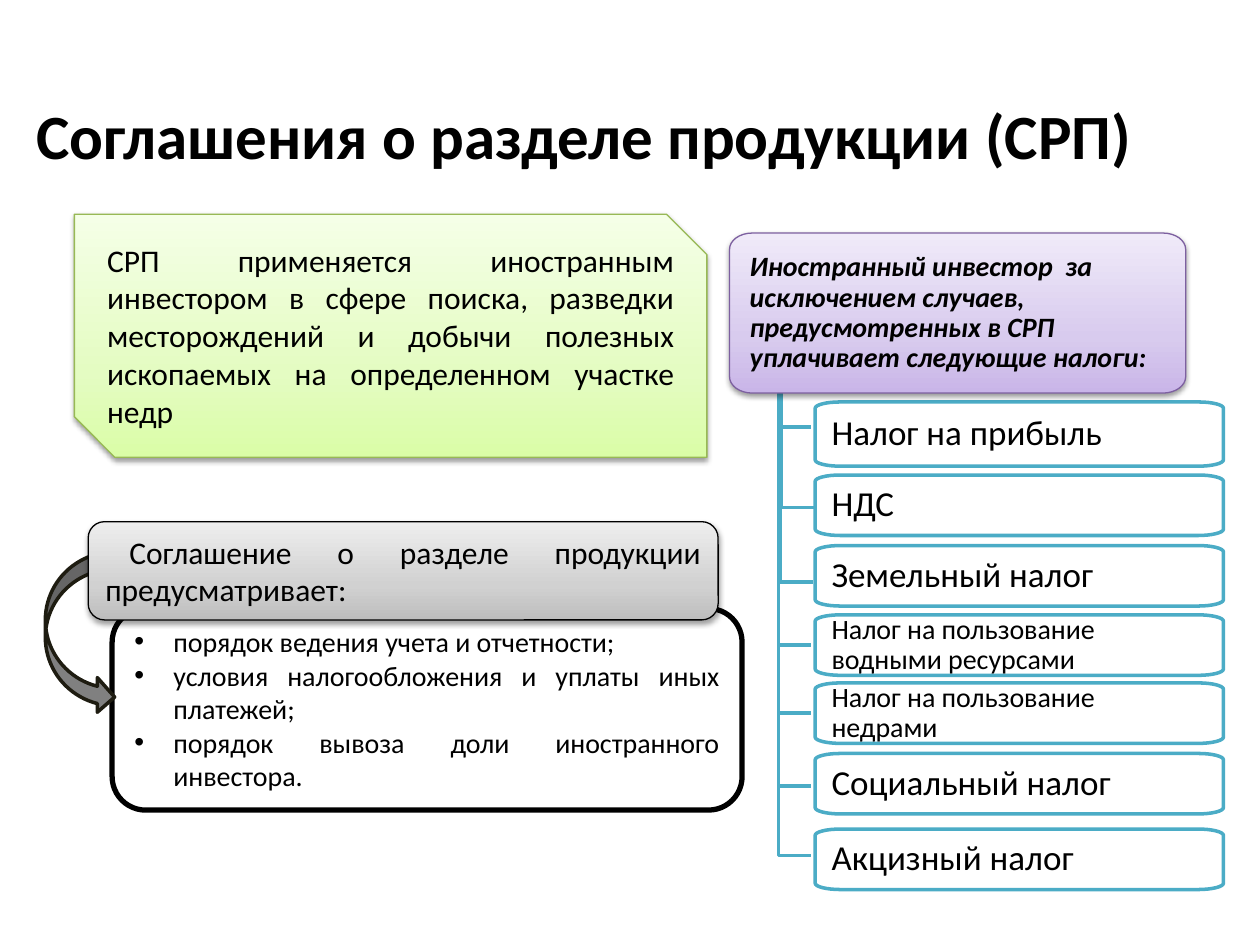
import math
from copy import deepcopy

from pptx import Presentation
from pptx.dml.color import RGBColor
from pptx.enum import shapes, text
from pptx.oxml import parse_xml
from pptx.oxml.ns import nsdecls, qn
from pptx.util import Emu, Inches, Pt

COLUMNS, ROWS = 100, 75
BLACK, WHITE, TEAL = "000000", "FFFFFF", "4BACC6"


def color(value):
    return RGBColor.from_string(value)


class Board:
    font = "Calibri"

    def __init__(self, deck):
        self.slide = deck.slides.add_slide(deck.slide_layouts[6])
        self.column = deck.slide_width / COLUMNS
        self.row = deck.slide_height / ROWS

    def frame(self, left, top, width, height):
        return (Emu(round(left * self.column)), Emu(round(top * self.row)),
                Emu(round(width * self.column)), Emu(round(height * self.row)))

    def paint(self, shape, fill, line, weight):
        shape.shadow.inherit = False
        if fill is None:
            shape.fill.background()
        elif isinstance(fill, str):
            shape.fill.solid()
            shape.fill.fore_color.rgb = color(fill)
        else:
            self.gradient(shape, fill)
            self.shadow(shape)
        shape.line.color.rgb = color(line)
        shape.line.width = Pt(weight)
        return shape

    def gradient(self, shape, tones):
        shape.fill.gradient()
        shape.fill.gradient_angle = 90
        stops = shape._element.spPr.find(".//" + qn("a:gsLst"))
        stops.append(deepcopy(stops[0]))
        for stop, tone, position in zip(shape.fill.gradient_stops, tones, (0, 0.35, 1)):
            stop.color.rgb = color(tone)
            stop.position = position

    def shadow(self, shape):
        shape._element.spPr.find(qn("a:effectLst")).append(parse_xml(
            f'<a:outerShdw {nsdecls("a")} blurRad="{Pt(3.1)}" dist="{Pt(1.6)}" '
            'dir="5400000" rotWithShape="0"><a:srgbClr val="000000">'
            '<a:alpha val="38000"/></a:srgbClr></a:outerShdw>'))

    def preset(self, kind, place, fill, line, weight=0.75, rotation=0):
        shape = self.slide.shapes.add_shape(kind, *self.frame(*place))
        shape.rotation = rotation
        return self.paint(shape, fill, line, weight)

    def outline(self, points, close, fill, line, weight):
        spots = [(x * self.column, y * self.row) for x, y in points]
        builder = self.slide.shapes.build_freeform(*spots[0])
        builder.add_line_segments(spots[1:], close=close)
        return self.paint(builder.convert_to_shape(), fill, line, weight)

    def rounded(self, place, corner, fill, line, weight, steps=8):
        left, top, width, height = place
        rx, ry = corner
        right, bottom = left + width - rx, top + height - ry
        centers = ((right, bottom), (left + rx, bottom), (left + rx, top + ry), (right, top + ry))
        points = []
        for quarter, (x, y) in enumerate(centers):
            for step in range(steps + 1):
                angle = (quarter + step / steps) * math.pi / 2
                points.append((x + rx * math.cos(angle), y + ry * math.sin(angle)))
        return self.outline(points, True, fill, line, weight)

    def branch(self, left, top, bottom, reach=2.6):
        points = ((left, top), (left, bottom), (left + reach, bottom))
        return self.outline(points, False, None, TEAL, 2)

    def label(self, place):
        return self.slide.shapes.add_textbox(*self.frame(*place))

    def letter(self, shape, lines, size, align="LEFT", anchor="TOP", insets=(0.1, 0.05),
               spacing=1, bold=False, italic=False, margin=0, indent=0, bullet=None):
        body = shape.text_frame
        body.word_wrap = True
        body.vertical_anchor = text.MSO_ANCHOR[anchor]
        body.margin_left = body.margin_right = Inches(insets[0])
        body.margin_top = body.margin_bottom = Inches(insets[1])
        for number, line in enumerate(lines):
            paragraph = body.add_paragraph() if number else body.paragraphs[0]
            paragraph.alignment = text.PP_ALIGN[align]
            paragraph.line_spacing = spacing
            properties = paragraph._p.get_or_add_pPr()
            properties.set("marL", str(Inches(margin)))
            properties.set("indent", str(Inches(indent)))
            if bullet:
                properties.append(parse_xml(f'<a:buFont {nsdecls("a")} typeface="Arial"/>'))
                properties.append(parse_xml(f'<a:buChar {nsdecls("a")} char="{bullet}"/>'))
            run = paragraph.add_run()
            run.text = line
            run.font.name = self.font
            run.font.size = Pt(size)
            run.font.bold, run.font.italic = bold, italic
            run.font.color.rgb = color(BLACK)


def main():
    deck = Presentation()
    deck.slide_width, deck.slide_height = Inches(10), Inches(7.5)
    board = Board(deck)
    preset = shapes.MSO_SHAPE

    provisions = board.preset(preset.ROUNDED_RECTANGLE, (8.9, 48.3, 50, 16), WHITE, BLACK, 3)
    board.letter(provisions, ["порядок ведения учета и отчетности;",
                              "условия налогообложения и уплаты иных платежей;",
                              "порядок вывоза доли иностранного инвестора."],
                 16, "JUSTIFY", margin=0.31, indent=-0.31, bullet="•")
    board.preset(preset.CURVED_UP_ARROW, (-0.1, 47.5, 12.9, 5.5), "808080", "1E1C11", 2, 90)

    title = board.label((1.9, 7.6, 98, 6.1))
    board.letter(title, ["Соглашения о разделе продукции (СРП)"], 36, anchor="MIDDLE", bold=True)

    scope = board.preset(preset.SNIP_2_DIAG_RECTANGLE, (5.9, 17, 50.2, 19.3),
                         ("DAFDA7", "E4FCC2", "F5FFE7"), "98B955")
    board.letter(scope, ["СРП применяется иностранным инвестором в сфере поиска, разведки "
                         "месторождений и добычи полезных ископаемых на определенном участке недр"],
                 18, "JUSTIFY")

    agreement = board.preset(preset.ROUNDED_RECTANGLE, (7, 41.4, 50, 7.8),
                             ("BDBDBD", "D1D1D1", "EEEEEE"), BLACK)
    board.letter(agreement, ["Соглашение о разделе продукции предусматривает:"],
                 18, "JUSTIFY", indent=0.19)

    taxes = (
        ("Налог на прибыль", 20, 31.9, 5.1, (61.8, 24.4, 33.9)),
        ("НДС", 20, 37.7, 4.8, (62, 30.7, 40.3)),
        ("Земельный налог", 20, 43.3, 4.8, (61.9, 36.6, 46.2)),
        ("Налог на пользование водными ресурсами", 16, 48.8, 4.8, (61.8, 41.7, 51.2)),
        ("Налог на пользование недрами", 16, 54.2, 4.8, (61.8, 31.2, 56.6)),
        ("Социальный налог", 20, 59.8, 4.8, (61.8, 37, 62.4)),
        ("Акцизный налог", 20, 65.8, 4.8, (61.8, 42.6, 67.9)),
    )
    for name, size, top, height, stem in taxes:
        board.branch(*stem)
        tax = board.rounded((64.7, top, 32.4, height), (2, 0.5), WHITE, TEAL, 2)
        board.letter(tax, [name], size, anchor="MIDDLE", insets=(0.13, 0.1), spacing=0.9)

    investor = board.rounded((57.9, 18.5, 36.2, 12.7), (1.8, 1.3),
                             ("C9B5E8", "D8CBEE", "F0EAF9"), "7D60A0", 0.75)
    board.letter(investor, ["Иностранный инвестор  за исключением случаев, предусмотренных в СРП "
                            "уплачивает следующие налоги:"],
                 16, anchor="MIDDLE", insets=(0.16, 0.12), spacing=0.9, bold=True, italic=True)

    deck.save("out.pptx")


if __name__ == "__main__":
    main()
